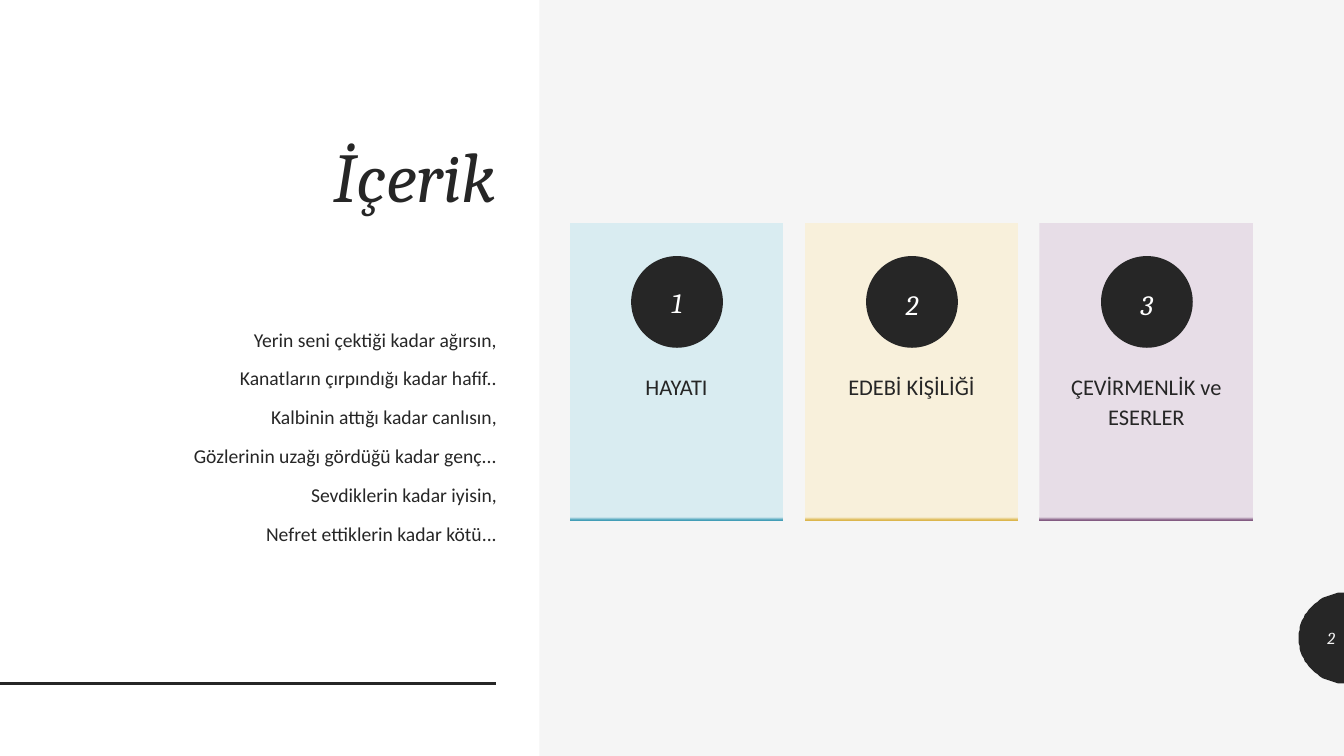
from copy import deepcopy
from dataclasses import dataclass
from math import cos, radians, sin

from lxml.etree import SubElement
from pptx import Presentation
from pptx.dml.color import RGBColor
from pptx.enum.shapes import MSO_CONNECTOR, MSO_SHAPE
from pptx.enum.text import MSO_ANCHOR, MSO_AUTO_SIZE, PP_ALIGN
from pptx.oxml.ns import qn
from pptx.util import Pt

SCALE = 9144  # EMU in one px, 100 px to the inch
WIDE, HIGH = 1333, 750


@dataclass(frozen=True)
class Theme:
    ink: str = "262626"
    white: str = "FFFFFF"
    grey: str = "F5F5F5"
    head: str = "Cambria"
    text: str = "Calibri"
    title: int = 50
    badge: int = 20
    label: int = 16
    verse: int = 14
    page: int = 12


def px(*nums):
    return [round(num * SCALE) for num in nums]


class Deck:
    def __init__(self, theme):
        self.theme = theme
        self.show = Presentation()
        self.show.slide_width, self.show.slide_height = px(WIDE, HIGH)
        self.slide = self.show.slides.add_slide(self.show.slide_layouts[1])
        self.shapes = self.slide.shapes
        self.paint(self.slide.background, theme.grey)

    def paint(self, item, color):
        item.fill.solid()
        item.fill.fore_color.rgb = RGBColor.from_string(color)

    def label(self, item, lines, size, color=None, head=False,
              align=PP_ALIGN.CENTER, anchor=MSO_ANCHOR.TOP,
              inset=(10, 5, 10, 5), space=1.12, before=9, after=0):
        """Set the text of a shape, one paragraph to a line."""
        frame = item.text_frame
        frame.word_wrap = True
        frame.auto_size = MSO_AUTO_SIZE.NONE
        frame.vertical_anchor = anchor
        (frame.margin_left, frame.margin_top,
         frame.margin_right, frame.margin_bottom) = px(*inset)
        for num, line in enumerate(lines):
            para = frame.add_paragraph() if num else frame.paragraphs[0]
            para.alignment = align
            para.line_spacing = space
            para.space_before, para.space_after = Pt(before), Pt(after)
            run = para.add_run()
            run.text = line
            font = run.font
            font.name = self.theme.head if head else self.theme.text
            font.size = Pt(size)
            font.italic = head
            font.color.rgb = RGBColor.from_string(color or self.theme.ink)

    def shape(self, kind, box, color=None):
        item = self.shapes.add_shape(kind, *px(*box))
        item.shadow.inherit = False
        item.line.fill.background()
        if color:
            self.paint(item, color)
        return item

    def place(self, index, box):
        """Move a placeholder to its box and to the front."""
        item = self.slide.placeholders[index]
        item.left, item.top, item.width, item.height = px(*box)
        self.shapes.element.append(item.element)
        return item

    def title(self, box, text):
        self.label(self.place(0, box), [text], self.theme.title, head=True,
                   align=PP_ALIGN.RIGHT, anchor=MSO_ANCHOR.BOTTOM,
                   space=0.9, before=0)

    def verse(self, box, lines):
        item = self.place(1, box)
        self.label(item, lines, self.theme.verse, align=PP_ALIGN.RIGHT)
        for para in item.text_frame.paragraphs:
            props = para._p.get_or_add_pPr()
            props.set("marL", "0")
            props.set("indent", "0")
            SubElement(props, qn("a:buNone"))

    def card(self, box, text, pale, edge):
        """Draw a pale card with a thin accent along its bottom."""
        item = self.shape(MSO_SHAPE.RECTANGLE, box)
        fill = item.fill
        fill.gradient()
        fill.gradient_angle = 270
        first = next(item.element.iter(qn("a:gs")))
        first.addnext(deepcopy(first))
        for stop, spot, color in zip(fill.gradient_stops, (0, 0.99, 1),
                                     (pale, pale, edge)):
            stop.position = spot
            stop.color.rgb = RGBColor.from_string(color)
        self.label(item, [text], self.theme.label, inset=(8, 146, 8, 0))

    def badge(self, box, text, space):
        item = self.shape(MSO_SHAPE.OVAL, box, self.theme.ink)
        self.label(item, [text], self.theme.badge, self.theme.white, head=True,
                   anchor=MSO_ANCHOR.MIDDLE, inset=(0, 0, 0, 0), space=space)

    def rule(self, left, right, top):
        line = self.shapes.add_connector(
            MSO_CONNECTOR.STRAIGHT, *px(left, top, right, top))
        line.line.color.rgb = RGBColor.from_string(self.theme.ink)
        line.line.width = Pt(2)
        SubElement(line.element.spPr, qn("a:effectLst"))

    def tab(self, mid, size):
        """Draw the half disc at the right edge."""
        dots = [(WIDE + size * cos(radians(turn)), mid + size * sin(radians(turn)))
                for turn in range(90, 271, 4)]
        pen = self.shapes.build_freeform(WIDE, mid - size, scale=SCALE)
        pen.add_line_segments([(WIDE, mid + size), *dots[1:]], close=True)
        item = pen.convert_to_shape()
        item.shadow.inherit = False
        item.line.fill.background()
        self.paint(item, self.theme.ink)

    def page(self, box, text):
        item = self.shapes.add_textbox(*px(*box))
        self.label(item, [text], self.theme.page, self.theme.grey, head=True,
                   align=PP_ALIGN.RIGHT, anchor=MSO_ANCHOR.MIDDLE,
                   space=1, before=0, after=6)


CARDS = [
    ("HAYATI", "D9ECF1", "439EB7", 1),
    ("EDEBİ KİŞİLİĞİ", "F8F0DB", "DCB64D", 1.12),
    ("ÇEVİRMENLİK ve ESERLER", "E7DDE7", "835B82", 1.12),
]
VERSE = [
    "Yerin seni çektiği kadar ağırsın,",
    "Kanatların çırpındığı kadar hafif..",
    "Kalbinin attığı kadar canlısın,",
    "Gözlerinin uzağı gördüğü kadar genç...",
    "Sevdiklerin kadar iyisin,",
    "Nefret ettiklerin kadar kötü...",
]


def main():
    deck = Deck(Theme())
    deck.tab(633, 45)
    deck.shape(MSO_SHAPE.RECTANGLE, (0, 0, 535, HIGH), deck.theme.white)
    deck.rule(0, 492, 678)
    deck.title((83, 61, 419, 160), "İçerik")
    for num, (text, pale, edge, space) in enumerate(CARDS):
        left = 565 + 233 * num
        deck.card((left, 221, 212, 295), text, pale, edge)
        deck.badge((left + 61, 254, 91, 91), str(num + 1), space)
    deck.page((1289, 613, 45, 40), "2")
    deck.verse((83, 317, 420, 312), VERSE)
    deck.show.save("out.pptx")


if __name__ == "__main__":
    main()
